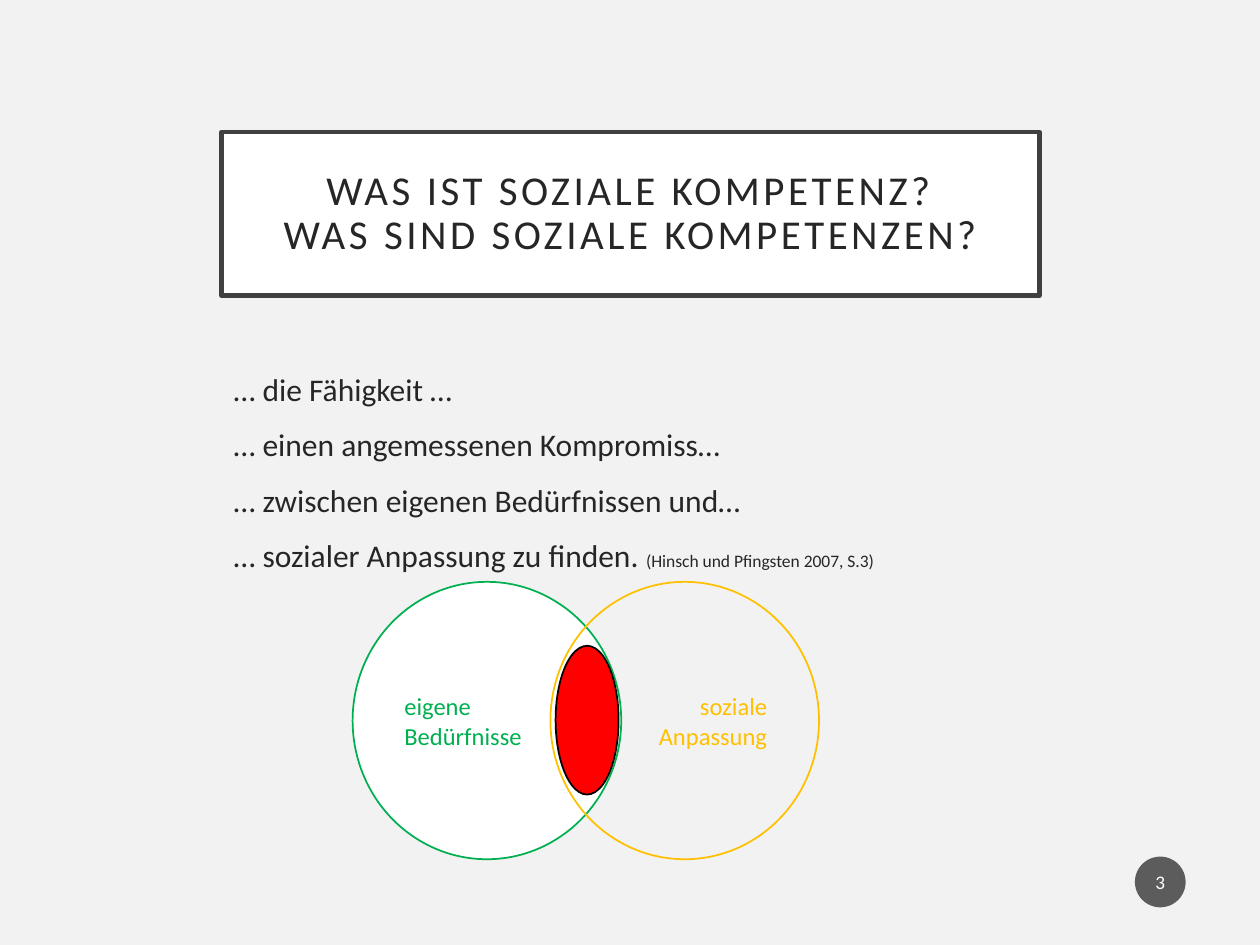
"""Builds the slide on social competence with its two overlapping circles."""
from dataclasses import dataclass
from typing import Optional

from lxml.etree import SubElement
from pptx import Presentation
from pptx.dml.color import RGBColor
from pptx.enum.shapes import MSO_SHAPE as Preset
from pptx.enum.text import MSO_ANCHOR as Anchor, PP_ALIGN as Align
from pptx.oxml.ns import qn
from pptx.shapes.autoshape import Shape
from pptx.slide import Slide
from pptx.util import Pt

FONT = "Calibri"
INK = "262626"
LEFT, WIDTH = 126.5, 467.5
CIRCLE_TOP, CIRCLE_WIDTH, CIRCLE_HEIGHT = 332.5, 153.5, 158.5
DEFINITION = (
    "… die Fähigkeit …",
    "… einen angemessenen Kompromiss…",
    "… zwischen eigenen Bedürfnissen und…",
    "… sozialer Anpassung zu finden. ",
)
CITATION = "(Hinsch und Pfingsten 2007, S.3)"


@dataclass(frozen=True)
class Box:
    left: float
    top: float
    width: float
    height: float
    preset: Preset = Preset.OVAL
    fill: Optional[str] = None
    line: Optional[str] = None
    weight: float = 1


@dataclass(frozen=True)
class Label:
    text: str
    size: float
    color: str
    align: Align = Align.LEFT


TITLE = Box(LEFT, 75.5, WIDTH, 93.5, Preset.RECTANGLE, "FFFFFF", "404040", 2.5)
NEEDS = Box(201.5, CIRCLE_TOP, CIRCLE_WIDTH, CIRCLE_HEIGHT, fill="FFFFFF", line="00B050")
ADAPTATION = Box(314.5, CIRCLE_TOP, CIRCLE_WIDTH, CIRCLE_HEIGHT, line="FFC000")
COMPROMISE = Box(317.5, 369, 36, 85, fill="FF0000", line="000000")
PAGE_BADGE = Box(648.5, 489.5, 29, 29, fill="1D1D1D")


def rgb(color: str) -> RGBColor:
    """Turn a hex string into a colour."""
    return RGBColor.from_string(color)


def style_runs(paragraph, size: float, color: str) -> None:
    """Give every run of a paragraph the slide font, a size and a colour."""
    for run in paragraph.runs:
        run.font.name = FONT
        run.font.size = Pt(size)
        run.font.color.rgb = rgb(color)


def draw_box(slide: Slide, box: Box) -> Shape:
    """Draw a preset shape with its fill and outline."""
    shape = slide.shapes.add_shape(
        box.preset, Pt(box.left), Pt(box.top), Pt(box.width), Pt(box.height)
    )
    shape.shadow.inherit = False
    if box.fill:
        shape.fill.solid()
        shape.fill.fore_color.rgb = rgb(box.fill)
    else:
        shape.fill.background()
    if box.line:
        shape.line.color.rgb = rgb(box.line)
        shape.line.width = Pt(box.weight)
    else:
        shape.line.fill.background()
    return shape


def write_label(shape: Shape, label: Label, inset_x: float = 7.2, inset_y: float = 3.6) -> None:
    """Write vertically centred text into a shape."""
    frame = shape.text_frame
    frame.word_wrap = True
    frame.vertical_anchor = Anchor.MIDDLE
    frame.margin_left = frame.margin_right = Pt(inset_x)
    frame.margin_top = frame.margin_bottom = Pt(inset_y)
    frame.text = label.text
    frame.paragraphs[0].alignment = label.align
    style_runs(frame.paragraphs[0], label.size, label.color)


def draw_title(slide: Slide) -> None:
    """Draw the framed title with widely spaced letters."""
    title = draw_box(slide, TITLE)
    question = "WAS IST SOZIALE KOMPETENZ?\vWAS SIND SOZIALE KOMPETENZEN?"
    write_label(title, Label(question, 23.4, INK, Align.CENTER), 14.4, 14.4)
    paragraph = title.text_frame.paragraphs[0]
    paragraph.line_spacing = 0.9
    for run in paragraph.runs:
        run.font._element.set("spc", "200")


def draw_definition(slide: Slide) -> None:
    """Write the definition line by line, followed by its citation."""
    definition = slide.shapes.add_textbox(Pt(LEFT), Pt(208), Pt(WIDTH), Pt(244))
    frame = definition.text_frame
    frame.word_wrap = True
    frame.text = "\n".join(DEFINITION)
    for paragraph in frame.paragraphs:
        paragraph.space_before = Pt(10)
        style_runs(paragraph, 18, INK)
    citation = frame.paragraphs[-1].add_run()
    citation.text = CITATION
    citation.font.name = FONT
    citation.font.size = Pt(10)
    citation.font.color.rgb = rgb(INK)


def draw_page_badge(slide: Slide) -> None:
    """Draw the translucent round page number."""
    badge = draw_box(slide, PAGE_BADGE)
    color = badge._element.spPr.find(qn("a:solidFill"))[0]
    SubElement(color, qn("a:alpha")).set("val", "70000")
    write_label(badge, Label("3", 11, "FFFFFF", Align.CENTER), 1.44)


def main() -> None:
    """Build and save the slide."""
    deck = Presentation()
    deck.slide_width, deck.slide_height = Pt(720), Pt(540)
    slide = deck.slides.add_slide(deck.slide_layouts[6])
    slide.background.fill.solid()
    slide.background.fill.fore_color.rgb = rgb("F2F2F2")
    draw_title(slide)
    draw_definition(slide)
    draw_page_badge(slide)
    write_label(draw_box(slide, NEEDS), Label("eigene Bedürfnisse", 14, NEEDS.line))
    write_label(
        draw_box(slide, ADAPTATION),
        Label("soziale Anpassung", 14, ADAPTATION.line, Align.RIGHT),
    )
    draw_box(slide, COMPROMISE)
    deck.save("out.pptx")


if __name__ == "__main__":
    main()
